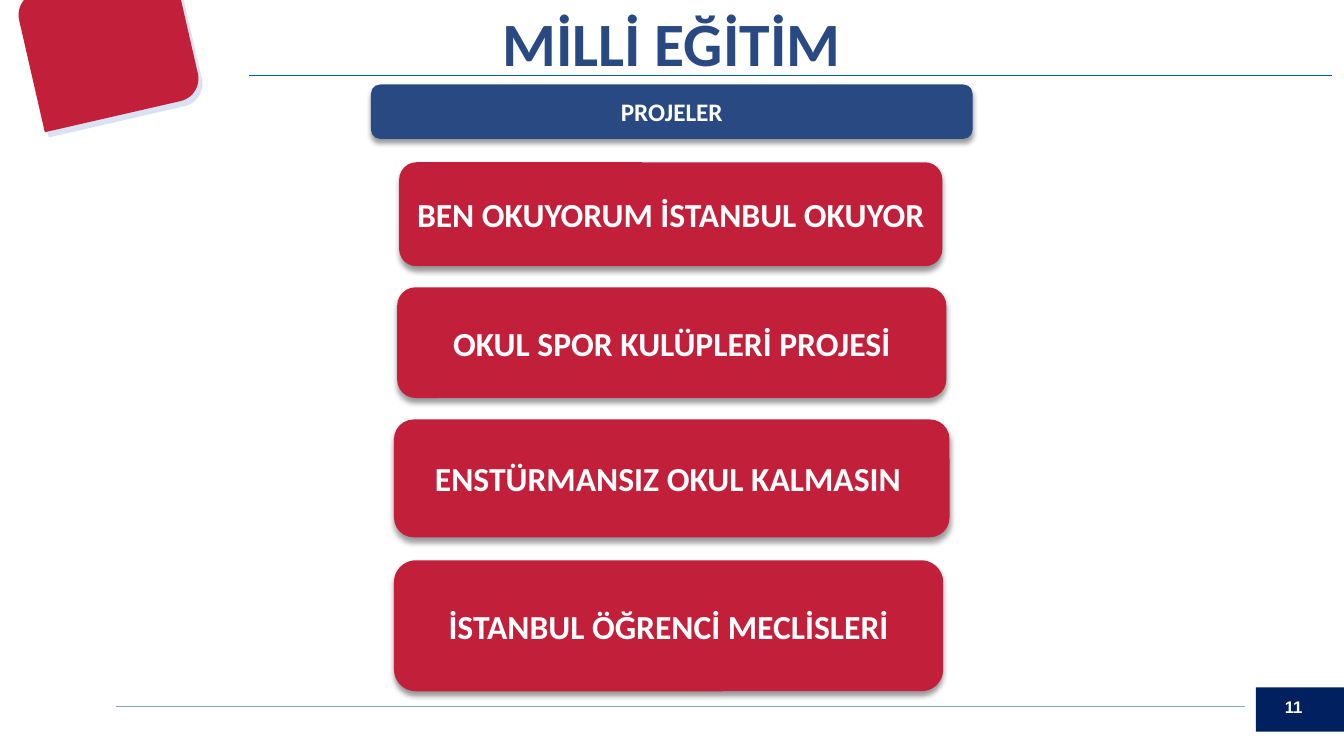
import pptx
import pptx.util
import pptx.dml.color
import pptx.enum.shapes
import pptx.enum.text
import pptx.oxml
import pptx.oxml.ns

Cm, Pt = pptx.util.Cm, pptx.util.Pt
SHAPE = pptx.enum.shapes.MSO_SHAPE
ALIGN = pptx.enum.text.PP_ALIGN

COLORS = {
    "navy": "294983", "red": "C21F3A", "white": "FFFFFF", "page": "002060",
    "tint": "4472C4", "header_rule": "005AAA", "footer_rule": "81ABB8",
}
TITLE = "MİLLİ EĞİTİM"
PAGE = "11"
BOXES = [
    ("PROJELER", 9.35, 2.13, 15.16, 1.37, "navy", 18),
    ("BEN OKUYORUM İSTANBUL OKUYOR", 10.06, 4.09, 13.69, 2.62, "red", 24),
    ("OKUL SPOR KULÜPLERİ PROJESİ", 10.01, 7.24, 13.84, 2.79, "red", 24),
    ("ENSTÜRMANSIZ OKUL KALMASIN ", 9.93, 10.57, 14, 2.97, "red", 24),
    ("İSTANBUL ÖĞRENCİ MECLİSLERİ", 9.93, 14.12, 13.84, 3.3, "red", 24),
]
RULES = [
    (2.92, 31.37, 17.81, "footer_rule", 0.75),
    (6.27, 33.58, 1.91, "header_rule", 1),
]
CORNERS = [(0.79, -0.43, "tint", 20), (0.69, -0.56, "red", 100)]
SHADOW = (
    '<a:effectLst %s><a:outerShdw blurRad="50800" dist="38100" dir="5400000" '
    'rotWithShape="0"><a:srgbClr val="000000"><a:alpha val="40000"/></a:srgbClr>'
    "</a:outerShdw></a:effectLst>" % pptx.oxml.ns.nsdecls("a")
)


def color(name):
    """Return the named palette colour."""
    return pptx.dml.color.RGBColor.from_string(COLORS[name])


def add_block(s, kind, x, y, w, h, fill):
    """Add a filled shape without outline or shadow."""
    sp = s.shapes.add_shape(kind, Cm(x), Cm(y), Cm(w), Cm(h))
    sp.shadow.inherit = False
    sp.fill.solid()
    sp.fill.fore_color.rgb = color(fill)
    sp.line.fill.background()
    return sp


def write(sp, text, size, font, fill, align):
    """Put one bold line of text in a shape."""
    tf = sp.text_frame
    tf.word_wrap = True
    tf.text = text
    p = tf.paragraphs[0]
    p.alignment = align
    r = p.runs[0]
    r.font.name, r.font.size, r.font.bold = font, Pt(size), True
    r.font.color.rgb = color(fill)


def add_rule(s, x1, x2, y, fill, width):
    """Add a horizontal rule."""
    line = s.shapes.add_connector(
        pptx.enum.shapes.MSO_CONNECTOR.STRAIGHT, Cm(x1), Cm(y), Cm(x2), Cm(y))
    line.line.color.rgb = color(fill)
    line.line.width = Pt(width)
    pptx.oxml.ns.qn("a:effectLst")
    line._element.spPr.append(
        pptx.oxml.parse_xml("<a:effectLst %s/>" % pptx.oxml.ns.nsdecls("a")))


def add_corner(s, x, y, fill, opacity):
    """Add one tilted sheet of the corner ornament."""
    sp = add_block(s, SHAPE.ROUND_2_DIAG_RECTANGLE, x, y, 4.09, 3.48, fill)
    sp.rotation = 347.1
    if opacity < 100:
        rgb = sp._element.spPr.find(".//" + pptx.oxml.ns.qn("a:srgbClr"))
        rgb.append(pptx.oxml.parse_xml(
            '<a:alpha %s val="%d"/>' % (pptx.oxml.ns.nsdecls("a"), opacity * 1000)))


def add_box(s, text, x, y, w, h, fill, size):
    """Add a rounded box with a soft shadow and centred text."""
    sp = add_block(s, SHAPE.ROUNDED_RECTANGLE, x, y, w, h, fill)
    spPr = sp._element.spPr
    spPr.replace(spPr.find(pptx.oxml.ns.qn("a:effectLst")), pptx.oxml.parse_xml(SHADOW))
    sp.text_frame.vertical_anchor = pptx.enum.text.MSO_ANCHOR.MIDDLE
    write(sp, text, size, "Calibri", "white", ALIGN.CENTER)


def main():
    """Build the slide and save it."""
    prs = pptx.Presentation()
    prs.slide_width, prs.slide_height = Cm(33.87), Cm(19.05)
    s = prs.slides.add_slide(prs.slide_layouts[6])
    for rule in RULES:
        add_rule(s, *rule)
    add_block(s, SHAPE.RECTANGLE, 31.65, 17.32, 2.22, 1.12, "page")
    number = s.shapes.add_textbox(Cm(32.13), Cm(17.42), Cm(1.74), Cm(0.76))
    write(number, PAGE, 12, "Arial", "white", ALIGN.LEFT)
    for corner in CORNERS:
        add_corner(s, *corner)
    title = s.shapes.add_textbox(Cm(3.3), Cm(0), Cm(27.25), Cm(2.13))
    write(title, TITLE, 44, "Calibri", "navy", ALIGN.CENTER)
    for box in BOXES:
        add_box(s, *box)
    prs.save("out.pptx")


if __name__ == "__main__":
    main()
